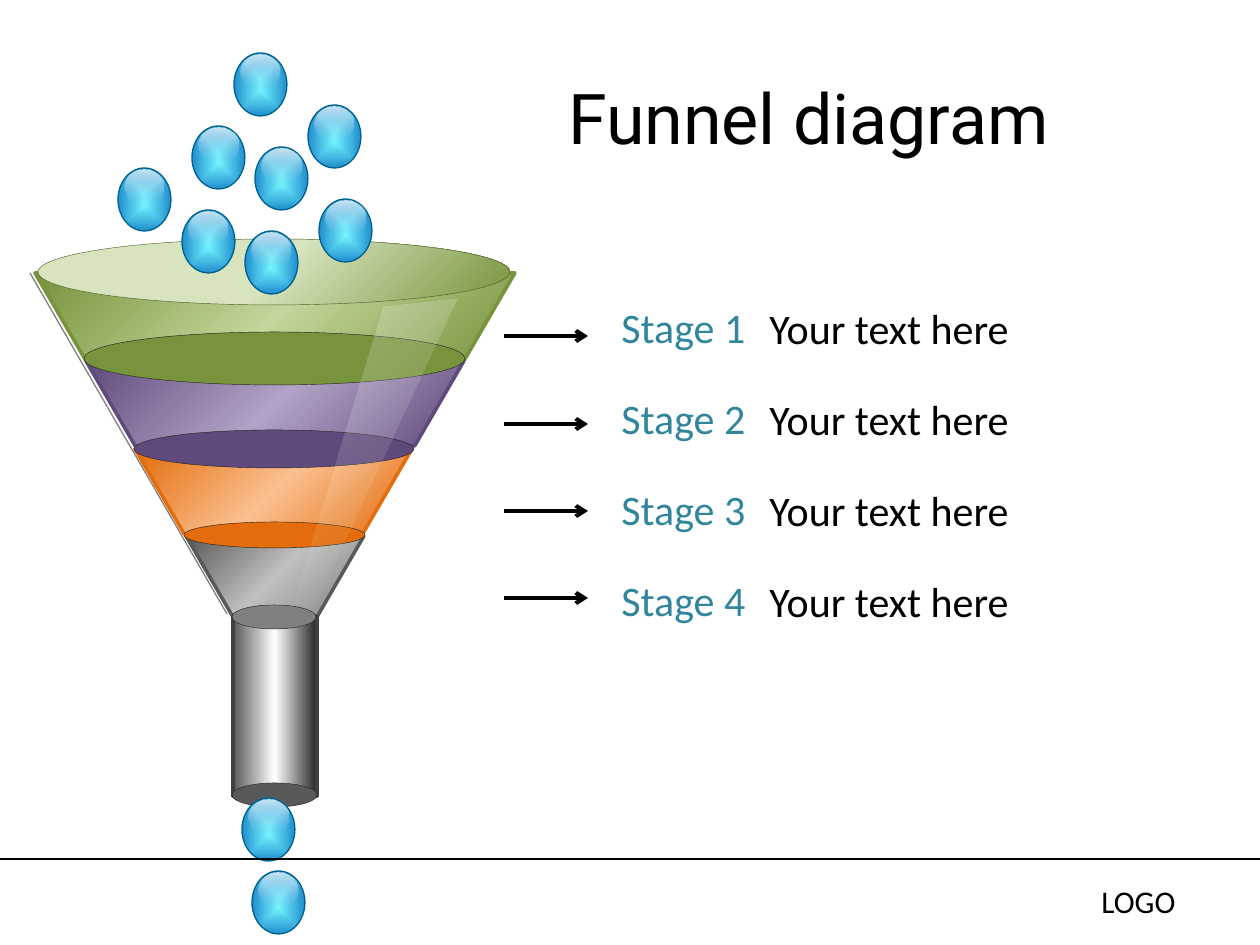
"""Build a funnel diagram slide with four labelled stages."""
from pptx import Presentation, util as u
from pptx.dml.color import RGBColor
from pptx.enum import shapes, text
from pptx.oxml import parse_xml
from pptx.oxml.ns import nsdecls, qn
from lxml import etree

PX = 914400 / 126
BLACK = RGBColor(0x00, 0x00, 0x00)
TEAL = RGBColor(0x31, 0x85, 0x9C)
GREEN = RGBColor(0x77, 0x93, 0x3C)
MID_GREEN = RGBColor(0xC3, 0xD6, 0x9B)
PALE_GREEN = RGBColor(0xD7, 0xE4, 0xBD)
DEEP_GREEN = RGBColor(0x4F, 0x62, 0x28)
PURPLE = RGBColor(0x60, 0x4A, 0x7B)
PALE_PURPLE = RGBColor(0xB3, 0xA2, 0xC7)
ORANGE = RGBColor(0xE4, 0x6C, 0x0A)
PALE_ORANGE = RGBColor(0xFA, 0xC0, 0x90)
GRAY = RGBColor(0x80, 0x80, 0x80)
PALE_GRAY = RGBColor(0xBF, 0xBF, 0xBF)
DARK_GRAY = RGBColor(0x59, 0x59, 0x59)
PIPE_EDGE = RGBColor(0x40, 0x40, 0x40)
CHARCOAL = RGBColor(0x26, 0x26, 0x26)
WHITE = RGBColor(0xFF, 0xFF, 0xFF)
AQUA = RGBColor(0x74, 0xF4, 0xFF)
BLUE = RGBColor(0x20, 0x8E, 0xCD)
NAVY = RGBColor(0x00, 0x61, 0x8E)
SKY = RGBColor(0x8E, 0xB4, 0xE3)
CORNER = '<a:path path="circle"><a:fillToRect l="100000" t="100000"/></a:path>'
CENTER = '<a:path path="shape"><a:fillToRect l="50000" t="50000" r="50000" b="50000"/></a:path>'
LINEAR = '<a:lin ang="{}" scaled="0"/>'


def paint(sp, stops, shade=None, edge=None, width=0.25):
    sp.shadow.inherit = False
    if shade:
        sp.fill.gradient()
        old = sp.fill._xPr.find(qn("a:gradFill"))
        marks = "".join(
            f'<a:gs pos="{pos * 1000}"><a:srgbClr val="{color}">'
            f'<a:alpha val="{alpha * 1000}"/></a:srgbClr></a:gs>'
            for pos, color, alpha in stops)
        old.getparent().replace(old, parse_xml(
            f'<a:gradFill {nsdecls("a")} rotWithShape="1">'
            f'<a:gsLst>{marks}</a:gsLst>{shade}</a:gradFill>'))
    else:
        sp.fill.solid()
        sp.fill.fore_color.rgb = stops
    if edge is None:
        sp.line.fill.background()
    else:
        sp.line.color.rgb = edge
        sp.line.width = u.Pt(width)


def px(*values):
    return [u.Emu(round(v * PX)) for v in values]


prs = Presentation()
prs.slide_width, prs.slide_height = px(1260, 945)
s = prs.slides.add_slide(prs.slide_layouts[6])
kind = shapes.MSO_SHAPE

bands = [
    ((35, 273, 480, 87), GREEN, MID_GREEN, GREEN),
    ((86, 361, 378, 85), PURPLE, PALE_PURPLE, PURPLE),
    ((135, 449, 277, 85), ORANGE, PALE_ORANGE, ORANGE),
    ((186, 536, 178, 159), GRAY, PALE_GRAY, DARK_GRAY),
]
bands[3] = ((186, 536, 178, 80),) + bands[3][1:]
for box, first, middle, last in bands:
    sp = s.shapes.add_shape(kind.TRAPEZOID, *px(*box))
    sp.adjustments[0] = 0.58
    sp._element.spPr.xfrm.set("flipV", "1")
    paint(sp, [(0, first, 100), (50, middle, 100), (100, last, 100)], CORNER, last, 2)

rim = s.shapes.add_shape(kind.OVAL, *px(38, 239, 472, 66))
paint(rim, [(0, GREEN, 100), (50, PALE_GREEN, 100), (100, PALE_GREEN, 100)],
      CORNER, DEEP_GREEN)
pipe = s.shapes.add_shape(kind.RECTANGLE, *px(233, 617, 84, 179))
paint(pipe, [(0, DARK_GRAY, 100), (50, WHITE, 100), (100, CHARCOAL, 100)],
      LINEAR.format(0), PIPE_EDGE, 2)
for box, color in [((84, 332, 381, 53), GREEN), ((134, 430, 280, 38), PURPLE),
                   ((184, 522, 181, 26), ORANGE), ((232, 783, 85, 24), DARK_GRAY),
                   ((232, 605, 84, 24), GRAY)]:
    paint(s.shapes.add_shape(kind.OVAL, *px(*box)), color, edge=CHARCOAL)

for x, y in [(252, 871), (118, 168), (192, 126), (182, 210), (255, 147),
             (234, 53), (245, 231), (242, 798), (319, 199), (308, 105)]:
    drop = s.shapes.add_group_shape().shapes
    paint(drop.add_shape(kind.OVAL, *px(x, y, 53, 63)),
          [(0, AQUA, 100), (100, BLUE, 100)], CENTER, NAVY, 0.75)
    paint(drop.add_shape(kind.OVAL, *px(x + 7, y + 2, 39, 34)),
          [(0, WHITE, 77), (100, SKY, 0)], LINEAR.format(5400000))

outline = s.shapes.build_freeform(383, 307, scale=PX)
outline.add_line_segments([(457, 299), (314, 609), (294, 602)])
paint(outline.convert_to_shape(), [(0, WHITE, 27), (50, WHITE, 12), (100, GREEN, 0)],
      LINEAR.format(2700000))

lines = [(s.shapes, (0, 859, 1260, 859), BLACK, 0.75, False),
         (s.shapes, (30, 273, 227, 614), GRAY, 0.75, False)]
left, center = text.PP_ALIGN.LEFT, text.PP_ALIGN.CENTER
labels = [
    (s.shapes, "LOGO", (1089, 876, 140, 50), 18, "Calibri", BLACK, left),
    (s.shapes, "Funnel diagram", (420, 38, 777, 158), 40, "Roboto", BLACK, center),
]
for i in range(4):
    stage = s.shapes.add_group_shape().shapes
    y = 336 + round(87.5 * i)
    lines.append((stage, (504, y, 588, y), BLACK, 2.25, True))
    top = 295 + 91 * i
    labels.append((stage, f"Stage {i + 1}", (609, top, 150, 63), 24, "Calibri", TEAL, left))
    labels.append((stage, "Your text here", (757, top + 1, 267, 63), 24, "Calibri", BLACK, left))

for parent, ends, color, width, arrow in lines:
    line = parent.add_connector(shapes.MSO_CONNECTOR.STRAIGHT, *px(*ends))
    line.line.color.rgb = color
    line.line.width = u.Pt(width)
    if arrow:
        etree.SubElement(line.line._get_or_add_ln(), qn("a:tailEnd"), type="arrow")
    etree.SubElement(line._element.spPr, qn("a:effectLst"))

for parent, words, box, size, font, color, align in labels:
    tf = parent.add_textbox(*px(*box)).text_frame
    tf.word_wrap = align == center
    tf.vertical_anchor = text.MSO_ANCHOR.MIDDLE if align == center else text.MSO_ANCHOR.TOP
    p = tf.paragraphs[0]
    p.alignment = align
    r = p.add_run()
    r.text = words
    r.font.size = u.Pt(size)
    r.font.name = font
    r.font.color.rgb = color

prs.save("out.pptx")
